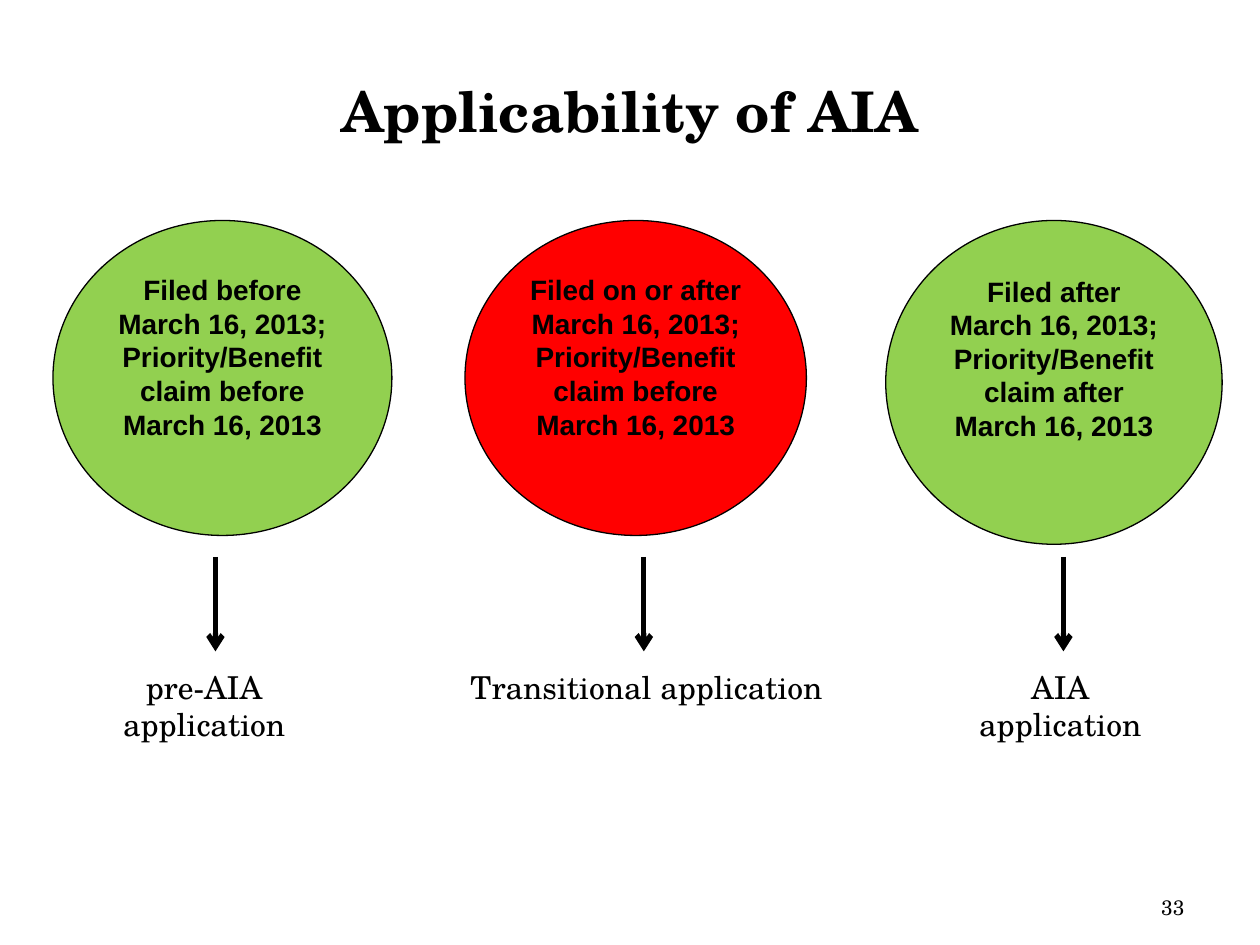
from dataclasses import dataclass

from lxml import etree
from pptx import Presentation
from pptx.dml.color import RGBColor
from pptx.enum.shapes import MSO_CONNECTOR, MSO_SHAPE
from pptx.enum.text import MSO_ANCHOR, MSO_AUTO_SIZE, PP_ALIGN
from pptx.oxml.ns import qn
from pptx.util import Inches, Pt

OVAL, STRAIGHT = MSO_SHAPE.OVAL, MSO_CONNECTOR.STRAIGHT
TOP, MIDDLE, BOTTOM = MSO_ANCHOR.TOP, MSO_ANCHOR.MIDDLE, MSO_ANCHOR.BOTTOM
CENTER, RIGHT = PP_ALIGN.CENTER, PP_ALIGN.RIGHT
GROW = MSO_AUTO_SIZE.SHAPE_TO_FIT_TEXT

COLORS = {"black": "000000", "green": "92D050", "red": "FF0000"}
SERIF = "TeX Gyre Schola"
TITLE_FONT = {"name": SERIF, "size": Pt(32), "bold": True}
LABEL_FONT = {"name": SERIF, "size": Pt(18), "bold": False}
NUMBER_FONT = {"name": SERIF, "size": Pt(12), "bold": False}
CIRCLE_FONT = {"name": "Arial", "size": Pt(16), "bold": True}

CIRCLE_TOP = 1.75
ARROW_TOP, ARROW_BOTTOM = 4.42, 5.17
LABEL_TOP, LABEL_HEIGHT = 5.25, 0.4


@dataclass
class FilingCase:
    left: float
    width: float
    height: float
    color: str
    conditions: tuple[str, ...]
    arrow_x: float
    label_left: float
    label_width: float
    label_lines: tuple[str, ...]


CASES = [
    FilingCase(0.42, 2.69, 2.5, "green",
               ("Filed before March 16, 2013;",
                "Priority/Benefit claim before March 16, 2013"),
               1.71, 0.41, 2.42, ("pre-AIA", "application")),
    FilingCase(3.69, 2.71, 2.5, "red",
               ("Filed on or after March 16, 2013; "
                "Priority/Benefit claim before March 16, 2013",),
               5.11, 3.42, 3.42, ("Transitional application",)),
    FilingCase(7.03, 2.67, 2.57, "green",
               ("Filed after March 16, 2013; "
                "Priority/Benefit claim after March 16, 2013",),
               8.44, 7.44, 1.95, ("AIA", "application")),
]


def rgb(name: str) -> RGBColor:
    return RGBColor.from_string(COLORS[name])


def format_para(para, font: dict, alignment) -> None:
    para.alignment = alignment
    for span in para.runs:
        for attribute, value in font.items():
            setattr(span.font, attribute, value)
        span.font.color.rgb = rgb("black")


def add_text(page, left: float, top: float, width: float, height: float,
             lines: tuple[str, ...], font: dict, anchor=TOP, alignment=CENTER):
    """Add a text box holding one paragraph, with a line break between lines."""
    box = page.shapes.add_textbox(Inches(left), Inches(top),
                                  Inches(width), Inches(height))
    frame = box.text_frame
    frame.word_wrap = True
    frame.vertical_anchor = anchor
    para = frame.paragraphs[0]
    for index, line in enumerate(lines):
        if index:
            para.add_line_break()
        para.add_run().text = line
    format_para(para, font, alignment)
    return box


def add_circle(page, case: FilingCase) -> None:
    circle = page.shapes.add_shape(OVAL, Inches(case.left), Inches(CIRCLE_TOP),
                                   Inches(case.width), Inches(case.height))
    circle.shadow.inherit = False
    circle.fill.solid()
    circle.fill.fore_color.rgb = rgb(case.color)
    circle.line.color.rgb = rgb("black")
    circle.line.width = Pt(0.75)
    frame = circle.text_frame
    frame.word_wrap = True
    frame.vertical_anchor = TOP
    frame.text = "\n".join(case.conditions)
    for para in frame.paragraphs:
        format_para(para, CIRCLE_FONT, CENTER)


def add_arrow(page, x: float) -> None:
    arrow = page.shapes.add_connector(STRAIGHT, Inches(x), Inches(ARROW_TOP),
                                      Inches(x), Inches(ARROW_BOTTOM))
    arrow.line.color.rgb = rgb("black")
    arrow.line.width = Pt(3)
    etree.SubElement(arrow.line._get_or_add_ln(), qn("a:tailEnd"), type="arrow")
    etree.SubElement(arrow._element.spPr, qn("a:effectLst"))


def add_label(page, case: FilingCase) -> None:
    label = add_text(page, case.label_left, LABEL_TOP, case.label_width,
                     LABEL_HEIGHT, case.label_lines, LABEL_FONT)
    label.text_frame.word_wrap = len(case.label_lines) == 1
    label.text_frame.auto_size = GROW


def main() -> None:
    deck = Presentation()
    deck.slide_width, deck.slide_height = Inches(10), Inches(7.5)
    page = deck.slides.add_slide(deck.slide_layouts[6])
    add_text(page, 0, 0.25, 10, 1.25, ("Applicability of AIA",), TITLE_FONT, MIDDLE)
    for case in CASES:
        add_circle(page, case)
        add_arrow(page, case.arrow_x)
        add_label(page, case)
    add_text(page, 7.17, 6.83, 2.33, 0.52, ("33",), NUMBER_FONT, BOTTOM, RIGHT)
    deck.save("out.pptx")


if __name__ == "__main__":
    main()
